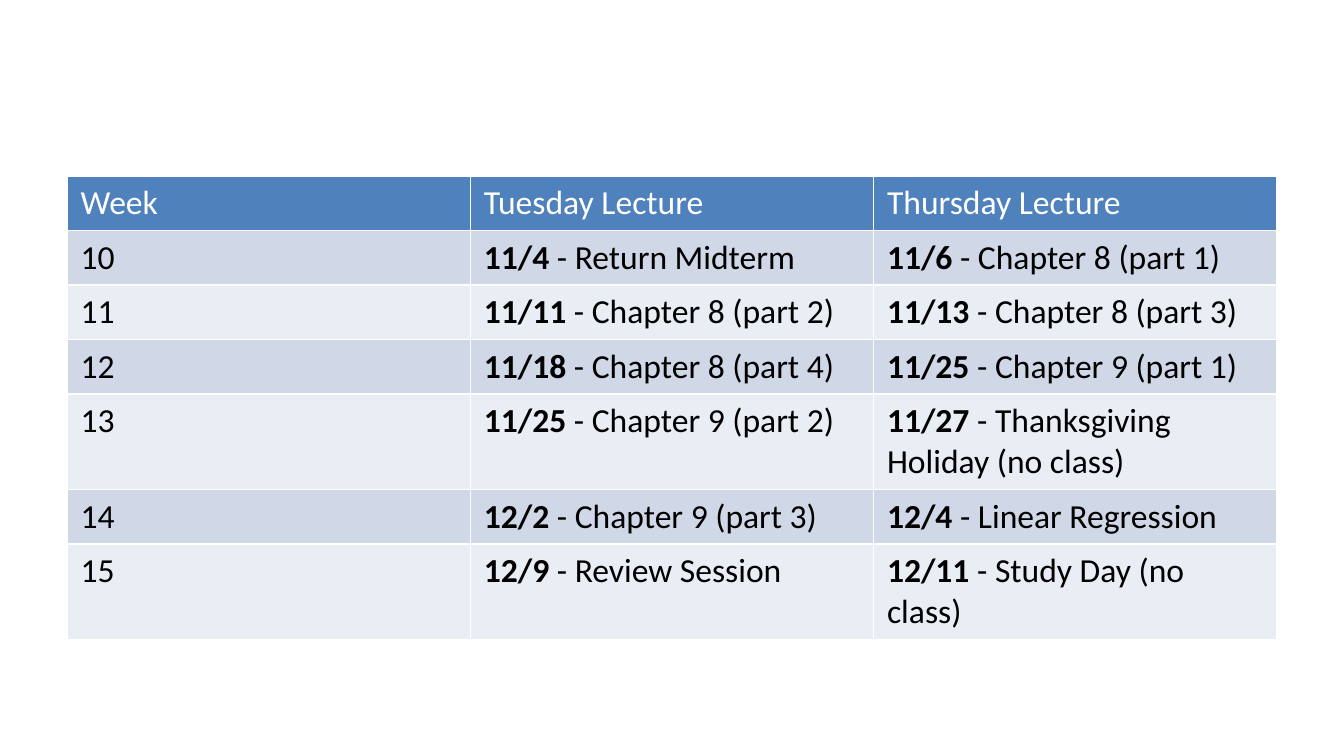
from lxml import etree
from pptx import Presentation
from pptx.dml.color import RGBColor
from pptx.oxml.ns import qn
from pptx.util import Inches, Pt

SLIDE_W = Inches(10)
SLIDE_H = SLIDE_W * 9 // 16
WHITE, BLACK, HEADER_BLUE = "FFFFFF", "000000", "4F81BD"
BANDS = ("D0D8E8", "E9EDF4")
LINE_ROW, WRAPPED_ROW = Inches(0.4), Inches(0.71)

HEADINGS = ("Week", "Tuesday Lecture", "Thursday Lecture")
# Week, then (date, topic) for Tuesday and Thursday
WEEKS = (
    ("10", ("11/4", "Return Midterm"), ("11/6", "Chapter 8 (part 1)")),
    ("11", ("11/11", "Chapter 8 (part 2)"), ("11/13", "Chapter 8 (part 3)")),
    ("12", ("11/18", "Chapter 8 (part 4)"), ("11/25", "Chapter 9 (part 1)")),
    ("13", ("11/25", "Chapter 9 (part 2)"), ("11/27", "Thanksgiving Holiday (no class)")),
    ("14", ("12/2", "Chapter 9 (part 3)"), ("12/4", "Linear Regression")),
    ("15", ("12/9", "Review Session"), ("12/11", "Study Day (no class)")),
)
WRAPPED_WEEKS = ("13", "15")


def color(hex_value):
    return RGBColor.from_string(hex_value)


def set_borders(cell, width):
    """Draw white borders of the given points on all sides of a cell."""
    properties = cell._tc.get_or_add_tcPr()
    for side in "LRTB":
        line = etree.SubElement(properties, qn(f"a:ln{side}"), w=str(Pt(width)))
        fill = etree.SubElement(line, qn("a:solidFill"))
        etree.SubElement(fill, qn("a:srgbClr"), val=WHITE)


def fill_cell(cell, parts, background, ink):
    """Write (text, bold) parts into a bordered, filled cell."""
    set_borders(cell, 1)
    cell.fill.solid()
    cell.fill.fore_color.rgb = color(background)
    paragraph = cell.text_frame.paragraphs[0]
    for text, bold in parts:
        run = paragraph.add_run()
        run.text = text
        for name, value in {"name": "Calibri", "size": Pt(18), "bold": bold}.items():
            setattr(run.font, name, value)
        run.font.color.rgb = color(ink)


def add_schedule(slide, left, top, width):
    """Place the lecture schedule in equal columns across the given width."""
    heights = [LINE_ROW] + [
        WRAPPED_ROW if week in WRAPPED_WEEKS else LINE_ROW for week, *_ in WEEKS
    ]
    schedule = slide.shapes.add_table(
        len(heights), len(HEADINGS), left, top, width, sum(heights)
    ).table
    for row, height in zip(schedule.rows, heights):
        row.height = height

    # Header row
    for column, heading in enumerate(HEADINGS):
        fill_cell(schedule.cell(0, column), [(heading, False)], HEADER_BLUE, WHITE)

    # Week rows in alternating bands
    for row, (week, *lectures) in enumerate(WEEKS, start=1):
        band = BANDS[(row - 1) % len(BANDS)]
        fill_cell(schedule.cell(row, 0), [(week, False)], band, BLACK)
        for column, (date, topic) in enumerate(lectures, start=1):
            parts = [(date, True), (f" - {topic}", False)]
            fill_cell(schedule.cell(row, column), parts, band, BLACK)


def main():
    deck = Presentation()
    deck.slide_width, deck.slide_height = SLIDE_W, SLIDE_H
    slide = deck.slides.add_slide(deck.slide_layouts[6])
    margin = int(SLIDE_W * 0.05)
    add_schedule(slide, margin, Inches(1.31), SLIDE_W - 2 * margin)
    deck.save("out.pptx")


if __name__ == "__main__":
    main()
